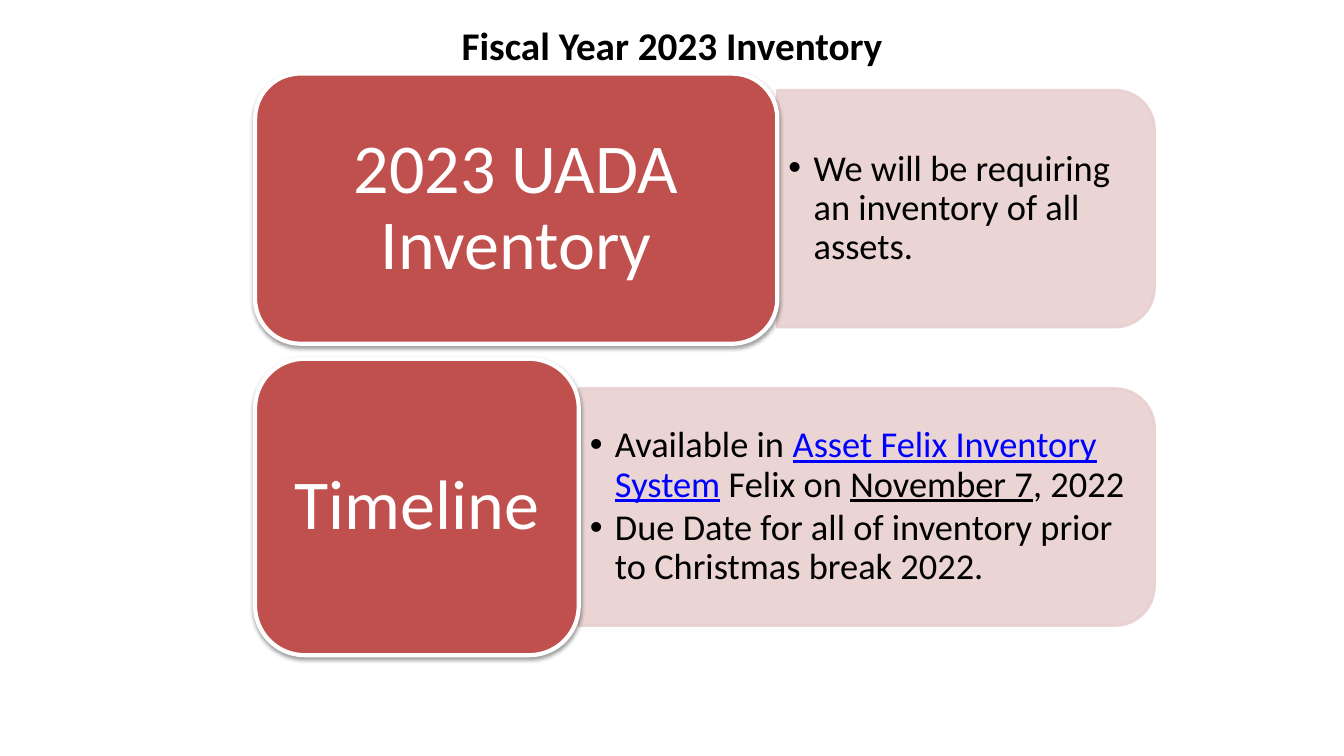
import lxml.etree
import pptx
import pptx.dml.color
import pptx.enum.shapes
import pptx.enum.text
import pptx.oxml.ns
import pptx.util

Inches, Pt = pptx.util.Inches, pptx.util.Pt
SHAPE = pptx.enum.shapes.MSO_SHAPE
ANCHOR = pptx.enum.text.MSO_ANCHOR
ALIGN = pptx.enum.text.PP_ALIGN
qn = pptx.oxml.ns.qn

LABEL_LEFT = 2.53
PANEL_RIGHT = 11.45
PANEL_HEIGHT = 2.35
PANEL_TEXT_HEIGHT = 2.12

SECTIONS = [
    {
        "heading": "2023 UADA Inventory",
        "top": 0.73, "width": 5.18, "height": 2.68,
        "details": [[("We will be requiring an inventory of all assets.", {})]],
    },
    {
        "heading": "Timeline",
        "top": 3.56, "width": 3.21, "height": 2.94,
        "details": [
            [
                ("Available in ", {}),
                ("Asset Felix Inventory System", {"color": "0000FF", "underline": True}),
                (" Felix on ", {}),
                ("November 7", {"underline": True}),
                (", 2022", {}),
            ],
            [("Due Date for all of inventory prior to Christmas break 2022.", {})],
        ],
    },
]


def rgb(color):
    return pptx.dml.color.RGBColor.from_string(color)


def add_run(paragraph, text, size=26, color="000000", bold=False, underline=False):
    run = paragraph.add_run()
    run.text = text
    run.font.name = "Calibri"
    run.font.size = Pt(size)
    run.font.bold = bold
    run.font.underline = underline
    run.font.color.rgb = rgb(color)


def set_frame(frame, anchor, side=0.1, edge=0.05):
    """Wrap the text and set its anchor and insets in inches."""
    frame.word_wrap = True
    frame.auto_size = pptx.enum.text.MSO_AUTO_SIZE.NONE
    frame.vertical_anchor = anchor
    frame.margin_left = frame.margin_right = Inches(side)
    frame.margin_top = frame.margin_bottom = Inches(edge)


def add_bullet(paragraph):
    properties = paragraph._p.get_or_add_pPr()
    properties.set("marL", str(Inches(0.25)))
    properties.set("indent", str(-Inches(0.25)))
    lxml.etree.SubElement(properties, qn("a:buFont"), typeface="Arial")
    lxml.etree.SubElement(properties, qn("a:buChar"), char="•")


def add_outlined(slide, preset, left, top, width, height, fill, line, line_width):
    shape = slide.shapes.add_shape(
        preset, Inches(left), Inches(top), Inches(width), Inches(height))
    shape.shadow.inherit = False
    shape.fill.solid()
    shape.fill.fore_color.rgb = rgb(fill)
    shape.line.color.rgb = rgb(line)
    shape.line.width = Pt(line_width)
    return shape


def add_panel(slide, left, middle):
    """Add a panel that is rounded on its right side only."""
    length = PANEL_RIGHT - left
    center = left + length / 2
    panel = add_outlined(
        slide, SHAPE.ROUND_2_SAME_RECTANGLE,
        center - PANEL_HEIGHT / 2, middle - length / 2, PANEL_HEIGHT, length,
        "E8D0D0", "E8D0D0", 2)
    panel.rotation = 90
    for color in panel._element.spPr.iter(qn("a:srgbClr")):
        lxml.etree.SubElement(color, qn("a:alpha"), val="90000")


def add_details(slide, left, middle, details):
    box = slide.shapes.add_textbox(
        Inches(left), Inches(middle - PANEL_TEXT_HEIGHT / 2),
        Inches(PANEL_RIGHT - left - 0.11), Inches(PANEL_TEXT_HEIGHT))
    frame = box.text_frame
    set_frame(frame, ANCHOR.MIDDLE, side=0.11)
    for index, runs in enumerate(details):
        paragraph = frame.paragraphs[0] if index == 0 else frame.add_paragraph()
        add_bullet(paragraph)
        paragraph.line_spacing = 0.9
        paragraph.space_after = Pt(3)
        for text, style in runs:
            add_run(paragraph, text, **style)


def add_label(slide, heading, top, width, height):
    label = add_outlined(
        slide, SHAPE.ROUNDED_RECTANGLE, LABEL_LEFT, top, width, height,
        "C0504D", "FFFFFF", 3)
    effects = label._element.spPr.find(qn("a:effectLst"))
    shadow = lxml.etree.SubElement(
        effects, qn("a:outerShdw"), blurRad=str(Pt(3.1)), dist=str(Pt(1.6)),
        dir="5400000", rotWithShape="0")
    color = lxml.etree.SubElement(shadow, qn("a:srgbClr"), val="000000")
    lxml.etree.SubElement(color, qn("a:alpha"), val="38000")

    set_frame(label.text_frame, ANCHOR.MIDDLE, side=0.21, edge=0.1)
    paragraph = label.text_frame.paragraphs[0]
    paragraph.alignment = ALIGN.CENTER
    paragraph.line_spacing = 0.9
    add_run(paragraph, heading, size=50, color="FFFFFF")


def add_section(slide, heading, top, width, height, details):
    label_right = LABEL_LEFT + width
    middle = top + height / 2
    add_panel(slide, label_right, middle)
    add_details(slide, label_right, middle, details)
    add_label(slide, heading, top, width, height)


def set_title(slide, text):
    title = slide.shapes.title
    title.left, title.top = Inches(0), Inches(0.03)
    title.width, title.height = Inches(13.33), Inches(0.7)
    set_frame(title.text_frame, ANCHOR.BOTTOM)
    paragraph = title.text_frame.paragraphs[0]
    paragraph.alignment = ALIGN.CENTER
    add_run(paragraph, text, size=28, bold=True)


def main():
    presentation = pptx.Presentation()
    presentation.slide_width = Inches(13.33)
    presentation.slide_height = Inches(7.5)
    slide = presentation.slides.add_slide(presentation.slide_layouts[5])
    set_title(slide, "Fiscal Year 2023 Inventory")
    for section in SECTIONS:
        add_section(slide, **section)
    presentation.save("out.pptx")


if __name__ == "__main__":
    main()
